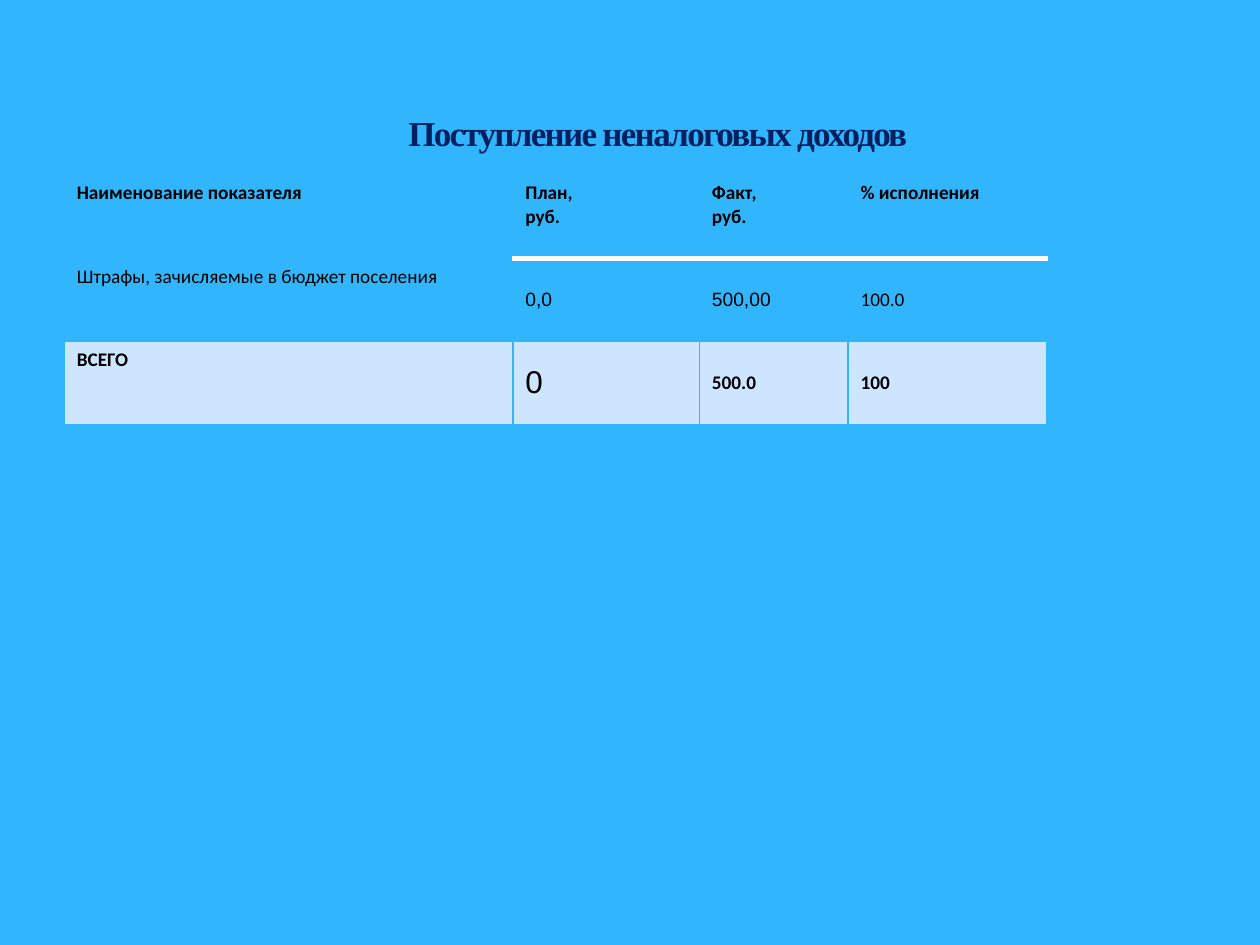
from dataclasses import dataclass

from lxml.etree import SubElement
from pptx import Presentation
from pptx.dml.color import RGBColor
from pptx.enum.text import MSO_ANCHOR as Anchor, MSO_AUTO_SIZE as AutoSize, PP_ALIGN as Align
from pptx.oxml.ns import qn
from pptx.util import Inches, Pt

SKY = RGBColor(0x31, 0xB6, 0xFD)
PALE = RGBColor(0xCD, 0xE5, 0xFE)
NAVY = RGBColor(0x00, 0x20, 0x60)
WHITE = RGBColor(0xFF, 0xFF, 0xFF)
BLACK = RGBColor(0x00, 0x00, 0x00)

SLIDE_WIDTH, SLIDE_HEIGHT = 10, 7.5
TITLE_BOX = (1.38, 0.68, 7.68, 0.74)
TABLE_LEFT, TABLE_TOP = 0.51, 1.39
COLUMN_WIDTHS = (3.56, 1.48, 1.18, 1.58)
ROW_HEIGHT = 0.66
THIN, THICK = 1, 3


@dataclass(frozen=True)
class Entry:
    text: str
    bold: bool = False
    size: float = 11
    font: str = "Calibri"


@dataclass(frozen=True)
class Row:
    entries: tuple[Entry, ...]
    fill: RGBColor | None = None
    middle: bool = True


ROWS = (
    Row((Entry("Наименование показателя", True), Entry("План,\nруб.", True),
         Entry("Факт,\nруб.", True), Entry("% исполнения", True)), SKY, False),
    Row((Entry("Штрафы, зачисляемые в бюджет поселения"), Entry("0,0", font="Arial"),
         Entry("500,00", font="Arial"), Entry("100.0"))),
    Row((Entry("ВСЕГО", True), Entry("0", size=18, font="Arial"),
         Entry("500.0", True), Entry("100", True)), PALE),
)


def format_span(span, color: RGBColor, **values) -> None:
    for name, value in values.items():
        setattr(span.font, name, value)
    span.font.color.rgb = color


def add_title(slide) -> None:
    title = slide.shapes.title
    for name, value in zip(("left", "top", "width", "height"), TITLE_BOX):
        setattr(title, name, Inches(value))
    frame = title.text_frame
    for name, value in {"word_wrap": True, "auto_size": AutoSize.NONE,
                        "vertical_anchor": Anchor.MIDDLE}.items():
        setattr(frame, name, value)
    para = frame.paragraphs[0]
    para.alignment = Align.CENTER
    span = para.add_run()
    span.text = "Поступление неналоговых доходов"
    format_span(span, NAVY, name="Times New Roman", size=Pt(20), bold=True)
    span.font._element.set("spc", "-100")


def add_border(cell, side: str, color: RGBColor, width: float) -> None:
    line = SubElement(cell._tc.get_or_add_tcPr(), qn(f"a:ln{side}"), w=str(Pt(width)))
    fill = SubElement(line, qn("a:solidFill"))
    SubElement(fill, qn("a:srgbClr"), val=str(color))


def fill_cell(cell, entry: Entry, row: Row, row_index: int, column: int) -> None:
    cell.text = entry.text
    cell.vertical_anchor = Anchor.MIDDLE if row.middle and column else Anchor.TOP
    for para in cell.text_frame.paragraphs:
        for span in para.runs:
            format_span(span, BLACK, name=entry.font, size=Pt(entry.size), bold=entry.bold)
    rule = (WHITE if column else SKY, THICK)
    edges = {side: (SKY, THIN) for side in "LRTB"}
    if row_index < 2:
        edges["B" if row_index == 0 else "T"] = rule
    for side, (color, width) in edges.items():
        add_border(cell, side, color, width)
    if row.fill is None:
        cell.fill.background()
    else:
        cell.fill.solid()
        cell.fill.fore_color.rgb = row.fill


def add_income_table(slide) -> None:
    table = slide.shapes.add_table(
        len(ROWS), len(COLUMN_WIDTHS), Inches(TABLE_LEFT), Inches(TABLE_TOP),
        Inches(sum(COLUMN_WIDTHS)), Inches(ROW_HEIGHT * len(ROWS))).table
    table.horz_banding = False
    for column, width in zip(table.columns, COLUMN_WIDTHS):
        column.width = Inches(width)
    for row_index, row in enumerate(ROWS):
        table.rows[row_index].height = Inches(ROW_HEIGHT)
        for column, entry in enumerate(row.entries):
            fill_cell(table.cell(row_index, column), entry, row, row_index, column)


def main() -> None:
    deck = Presentation()
    deck.slide_width, deck.slide_height = Inches(SLIDE_WIDTH), Inches(SLIDE_HEIGHT)
    page = deck.slides.add_slide(deck.slide_layouts[5])
    page.background.fill.solid()
    page.background.fill.fore_color.rgb = SKY
    add_title(page)
    add_income_table(page)
    deck.save("out.pptx")


if __name__ == "__main__":
    main()
